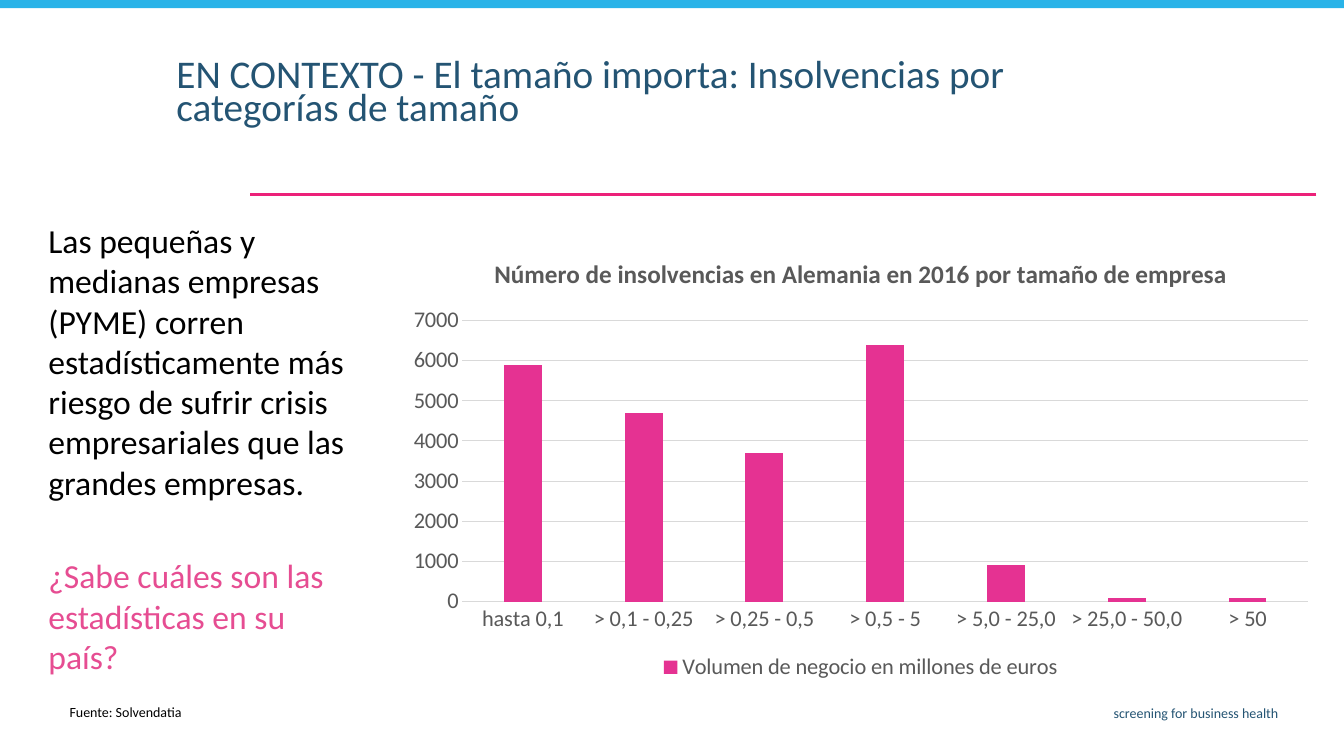
"""Build the slide on German insolvencies by company size."""
import dataclasses
import typing

import pptx
import pptx.chart.data
import pptx.dml.color
import pptx.enum.chart
import pptx.enum.shapes
import pptx.enum.text
import pptx.oxml.ns
import pptx.util
from lxml import etree

COLUMNS, ROWS = 160, 90
FONT = "Calibri"
COLORS = {
    "navy": "245473", "sky": "29B3E8", "line": "EC2179", "question": "E64D92",
    "bars": "E53292", "text": "000000", "label": "595959", "grid": "D9D9D9",
}
ALIGN = pptx.enum.text.PP_ALIGN

deck = pptx.Presentation()
deck.slide_width = pptx.util.Inches(13.33)
deck.slide_height = pptx.util.Inches(7.5)


@dataclasses.dataclass
class Area:
    """A rectangle in grid columns and rows."""
    column: float
    row: float
    width: float
    height: float

    def lengths(self) -> tuple[int, int, int, int]:
        """Return left, top, width and height in slide units."""
        return (across(self.column), down(self.row), across(self.width), down(self.height))


@dataclasses.dataclass
class Line:
    """One paragraph with its look."""
    text: str
    size: float
    color: str
    align: ALIGN = ALIGN.LEFT
    before: float = 0
    spacing: typing.Any = 1.0


@dataclasses.dataclass
class Block:
    """A text frame's place, insets and paragraphs."""
    area: Area
    lines: list[Line]
    side_inset: float = 0.1
    top_inset: float = 0.05


def across(columns: float) -> int:
    """Convert grid columns to a length."""
    return round(deck.slide_width * columns / COLUMNS)


def down(rows: float) -> int:
    """Convert grid rows to a length."""
    return round(deck.slide_height * rows / ROWS)


def rgb(name: str) -> pptx.dml.color.RGBColor:
    """Look up a named colour."""
    return pptx.dml.color.RGBColor.from_string(COLORS[name])


def style_font(font: typing.Any, size: float, color: str, bold: bool = False) -> None:
    """Set the font's face, size, weight and colour."""
    font.name, font.size, font.bold = FONT, pptx.util.Pt(size), bold
    font.color.rgb = rgb(color)


def fill_block(box: typing.Any, block: Block) -> None:
    """Place a box and write its paragraphs."""
    box.left, box.top, box.width, box.height = block.area.lengths()
    frame = box.text_frame
    frame.word_wrap = True
    frame.auto_size = pptx.enum.text.MSO_AUTO_SIZE.NONE
    frame.vertical_anchor = pptx.enum.text.MSO_ANCHOR.TOP
    frame.margin_left = frame.margin_right = pptx.util.Inches(block.side_inset)
    frame.margin_top = frame.margin_bottom = pptx.util.Inches(block.top_inset)
    frame.text = "\n".join(line.text for line in block.lines)
    for para, line in zip(frame.paragraphs, block.lines):
        para.alignment = line.align
        para.space_before = pptx.util.Pt(line.before)
        para.line_spacing = line.spacing
        properties = para._p.get_or_add_pPr()
        properties.set("marL", "0")
        properties.set("indent", "0")
        etree.SubElement(properties, pptx.oxml.ns.qn("a:buNone"))
        for span in para.runs:
            style_font(span.font, line.size, line.color)


def draw_frame(page: typing.Any) -> None:
    """Draw the top band and the rule under the title."""
    band = page.shapes.add_shape(
        pptx.enum.shapes.MSO_SHAPE.RECTANGLE, *Area(0, 0, COLUMNS, 0.96).lengths())
    band.shadow.inherit = False
    band.fill.solid()
    band.fill.fore_color.rgb = rgb("sky")
    band.line.fill.background()
    rule = page.shapes.add_connector(
        pptx.enum.shapes.MSO_CONNECTOR.STRAIGHT,
        across(156.72), down(23.16), across(29.76), down(23.16))
    rule.line.color.rgb = rgb("line")
    rule.line.width = pptx.util.Pt(1.5)
    etree.SubElement(rule._element.spPr, pptx.oxml.ns.qn("a:effectLst"))


def draw_chart(page: typing.Any, area: Area) -> None:
    """Draw the insolvencies column chart."""
    data = pptx.chart.data.CategoryChartData()
    data.categories = ["hasta 0,1", "> 0,1 - 0,25", "> 0,25 - 0,5", "> 0,5 - 5",
                       "> 5,0 - 25,0", "> 25,0 - 50,0", "> 50"]
    data.add_series("Volumen de negocio en millones de euros",
                    [5900, 4700, 3700, 6400, 900, 100, 100])
    chart = page.shapes.add_chart(
        pptx.enum.chart.XL_CHART_TYPE.COLUMN_CLUSTERED, *area.lengths(), data).chart
    style_font(chart.font, 10, "text")
    chart.has_title = True
    title = chart.chart_title
    title.include_in_layout = False
    title.text_frame.text = "Número de insolvencias en Alemania en 2016 por tamaño de empresa"
    style_font(title.text_frame.paragraphs[0].runs[0].font, 18, "label", True)
    chart.has_legend = True
    chart.legend.position = pptx.enum.chart.XL_LEGEND_POSITION.BOTTOM
    chart.legend.include_in_layout = False
    style_font(chart.legend.font, 16, "label")
    plot = chart.plots[0]
    plot.gap_width, plot.overlap, plot.vary_by_categories = 219, -27, False
    bars = plot.series[0]
    bars.format.fill.solid()
    bars.format.fill.fore_color.rgb = rgb("bars")
    for axis in (chart.category_axis, chart.value_axis):
        axis.major_tick_mark = axis.minor_tick_mark = pptx.enum.chart.XL_TICK_MARK.NONE
        style_font(axis.tick_labels.font, 16, "label")
    values = chart.value_axis
    values.minimum_scale, values.maximum_scale, values.major_unit = 0, 7000, 1000
    values.has_major_gridlines = True
    values.format.line.fill.background()
    for line in (chart.category_axis.format.line, values.major_gridlines.format.line):
        line.color.rgb = rgb("grid")
        line.width = pptx.util.Pt(0.75)


def main() -> None:
    """Assemble and save the slide."""
    page = deck.slides.add_slide(deck.slide_layouts[1])
    draw_frame(page)
    fill_block(page.shapes.title, Block(Area(19.8, 6.84, 116.16, 9.12), [
        Line("EN CONTEXTO - El tamaño importa: Insolvencias por categorías de tamaño",
             28, "navy", spacing=0.7)]))
    fill_block(page.placeholders[1], Block(Area(4.68, 25.68, 38.64, 54.6), [
        Line("Las pequeñas y medianas empresas (PYME) corren estadísticamente más riesgo "
             "de sufrir crisis empresariales que las grandes empresas.", 24, "text"),
        Line("¿Sabe cuáles son las estadísticas en su país?", 24, "question", before=38),
    ], 0.09, 0.04))
    draw_chart(page, Area(47.04, 28.32, 110.88, 53.28))
    small_texts = [
        Block(Area(7.2, 82.8, 22.2, 3.48), [
            Line("Fuente: Solvendatia", 10, "text", spacing=pptx.util.Pt(15))], 0.09, 0.04),
        Block(Area(43.8, 83.28, 109.56, 3.48), [
            Line("screening for business health", 10, "navy", ALIGN.RIGHT)]),
    ]
    for block in small_texts:
        fill_block(page.shapes.add_textbox(*block.area.lengths()), block)
    deck.save("out.pptx")


if __name__ == "__main__":
    main()
